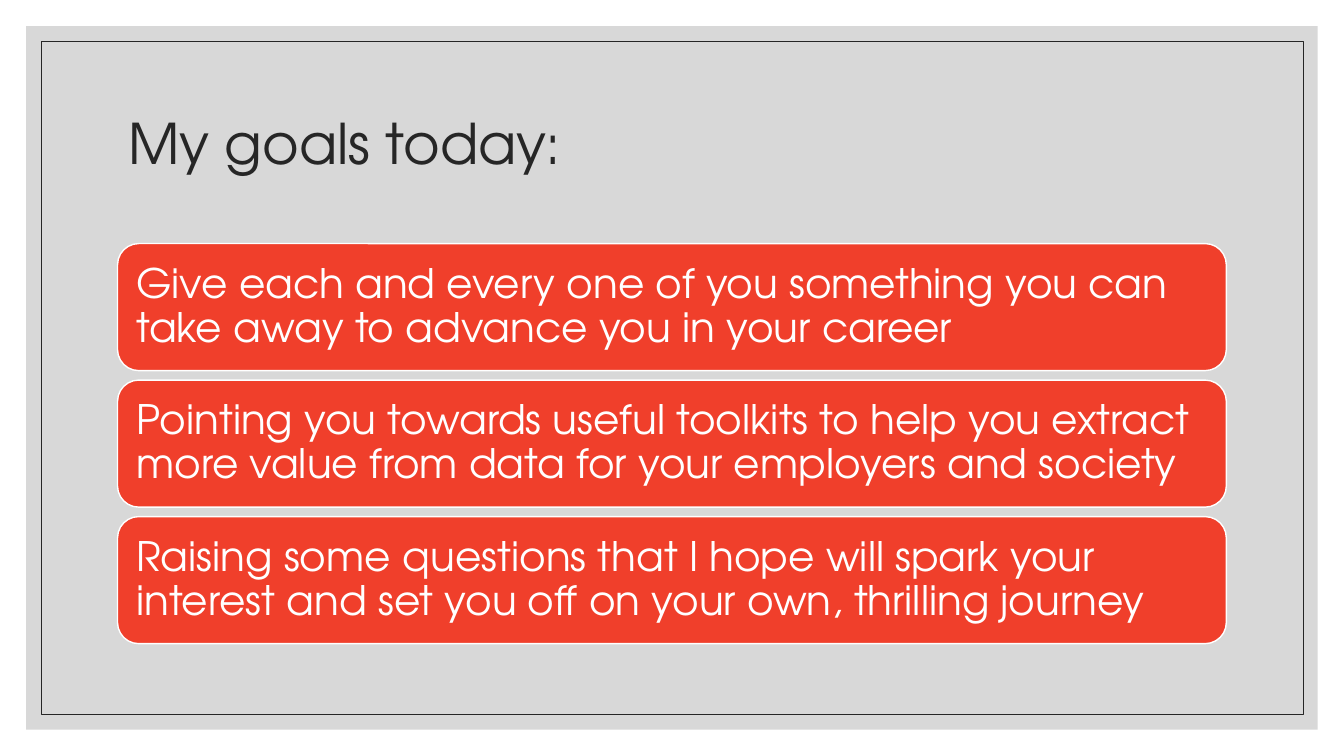
"""Build the slide that lists the speaker's goals for today."""
from dataclasses import dataclass

import lxml.etree
import pptx
import pptx.dml.color
import pptx.enum.shapes
import pptx.enum.text
import pptx.oxml.ns
import pptx.util

EMU_PER_PX = 9525
FONT = "TeX Gyre Adventor"
INK, WHITE, RED, GREY = "262626", "FFFFFF", "F03F2B", "BFBFBF"
RECTANGLE = pptx.enum.shapes.MSO_SHAPE.RECTANGLE
ROUNDED = pptx.enum.shapes.MSO_SHAPE.ROUNDED_RECTANGLE

CARD_LEFT, CARD_TOP, CARD_WIDTH, CARD_HEIGHT, CARD_PITCH = 112, 232, 1056, 121, 130
GOALS = [
    "Give each and every one of you something you can take away to advance you in your career",
    "Pointing you towards useful toolkits to help you extract more value from data "
    "for your employers and society",
    "Raising some questions that I hope will spark your interest and set you off "
    "on your own, thrilling journey",
]


@dataclass(frozen=True)
class Box:
    left: int
    top: int
    width: int
    height: int

    def emu(self) -> list[int]:
        return [px(side) for side in (self.left, self.top, self.width, self.height)]


@dataclass(frozen=True)
class Panel:
    box: Box
    preset: int = RECTANGLE
    fill: str | None = None
    opacity: int = 100
    line: str | None = None
    line_width: float = 1


def px(length: int) -> int:
    return pptx.util.Emu(length * EMU_PER_PX)


def set_color(color_format, value: str) -> None:
    color_format.rgb = pptx.dml.color.RGBColor.from_string(value)


def draw_panel(slide, panel: Panel):
    shape = slide.shapes.add_shape(panel.preset, *panel.box.emu())
    shape.shadow.inherit = False
    if panel.fill:
        shape.fill.solid()
        set_color(shape.fill.fore_color, panel.fill)
    else:
        shape.fill.background()
    if panel.opacity < 100:
        color = shape.fill._xPr.find(".//" + pptx.oxml.ns.qn("a:srgbClr"))
        alpha = lxml.etree.SubElement(color, pptx.oxml.ns.qn("a:alpha"))
        alpha.set("val", str(panel.opacity * 1000))
    if panel.line:
        set_color(shape.line.color, panel.line)
        shape.line.width = pptx.util.Pt(panel.line_width)
    else:
        shape.line.fill.background()
    return shape


def write_text(shape, text: str, *, size: int, color: str, inset_x: int, inset_y: int) -> None:
    frame = shape.text_frame
    frame.word_wrap = True
    frame.vertical_anchor = pptx.enum.text.MSO_ANCHOR.MIDDLE
    frame.margin_left = frame.margin_right = px(inset_x)
    frame.margin_top = frame.margin_bottom = px(inset_y)
    paragraph = frame.paragraphs[0]
    paragraph.alignment = pptx.enum.text.PP_ALIGN.LEFT
    paragraph.line_spacing = 0.9
    run = paragraph.add_run()
    run.text = text
    run.font.name = FONT
    run.font.size = pptx.util.Pt(size)
    set_color(run.font.color, color)


def main() -> None:
    presentation = pptx.Presentation()
    presentation.slide_width, presentation.slide_height = px(1280), px(720)
    slide = presentation.slides.add_slide(presentation.slide_layouts[6])

    draw_panel(slide, Panel(Box(25, 25, 1230, 670), fill=GREY, opacity=60))
    draw_panel(slide, Panel(Box(39, 39, 1202, 641), line=INK, line_width=0.5))

    title = slide.shapes.add_textbox(*Box(CARD_LEFT, 67, CARD_WIDTH, 144).emu())
    write_text(title, "My goals today:", size=40, color=INK, inset_x=10, inset_y=5)

    for row, goal in enumerate(GOALS):
        box = Box(CARD_LEFT, CARD_TOP + row * CARD_PITCH, CARD_WIDTH, CARD_HEIGHT)
        card = draw_panel(slide, Panel(box, ROUNDED, fill=RED, line=WHITE))
        write_text(card, goal, size=29, color=WHITE, inset_x=12, inset_y=12)

    presentation.save("out.pptx")


if __name__ == "__main__":
    main()
